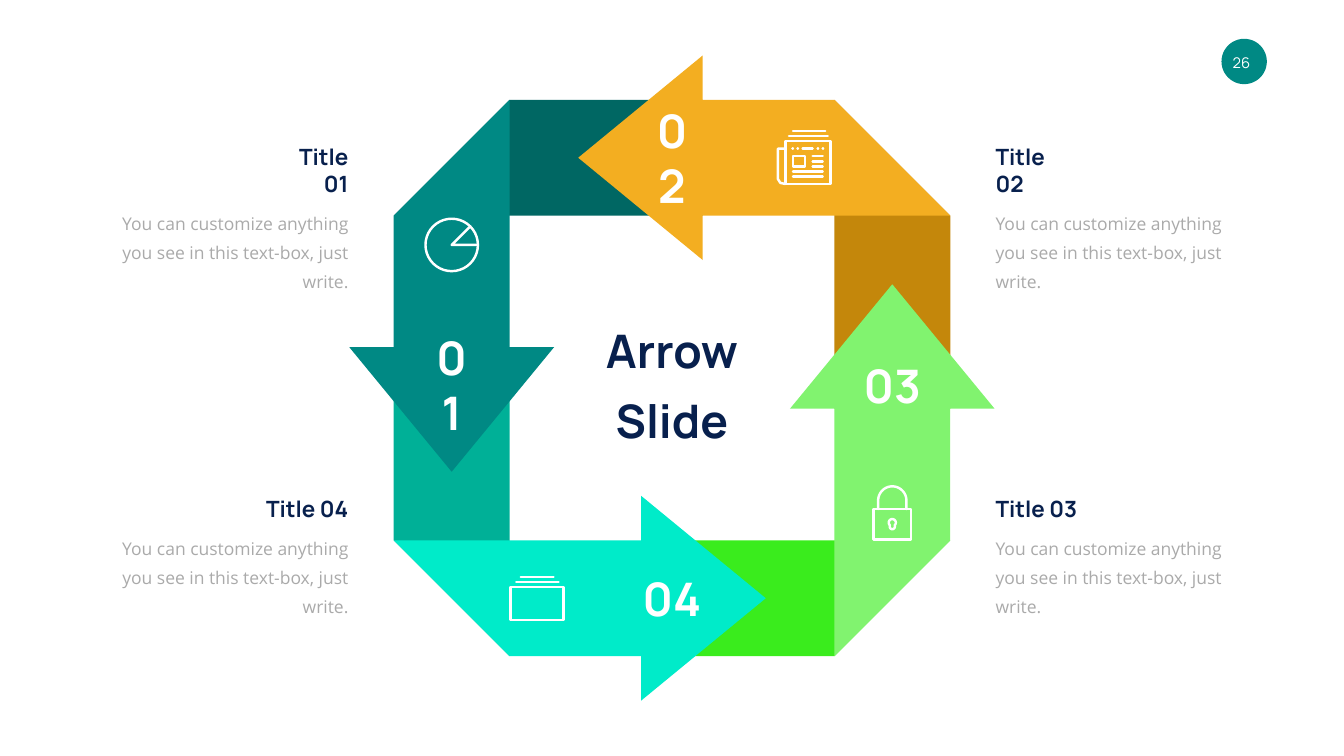
from math import cos, radians, sin

from pptx import Presentation
from pptx.dml.color import RGBColor
from pptx.enum.shapes import MSO_SHAPE as Shape
from pptx.enum.text import MSO_ANCHOR as Anchor
from pptx.enum.text import MSO_AUTO_SIZE as AutoSize
from pptx.enum.text import PP_ALIGN as Align
from pptx.oxml.ns import qn
from pptx.util import Inches, Pt

WHITE = RGBColor(0xFF, 0xFF, 0xFF)
NAVY = RGBColor(0x08, 0x20, 0x4D)
GREY = RGBColor(0xAA, 0xAA, 0xAA)
TEAL = RGBColor(0x00, 0x89, 0x84)
DARK_TEAL = RGBColor(0x00, 0x67, 0x63)
JADE = RGBColor(0x00, 0xB0, 0x97)
AQUA = RGBColor(0x00, 0xEB, 0xC9)
GREEN = RGBColor(0x3A, 0xEC, 0x1D)
LIGHT_GREEN = RGBColor(0x81, 0xF3, 0x6F)
AMBER = RGBColor(0xF3, 0xAE, 0x21)
BROWN = RGBColor(0xC4, 0x87, 0x0B)

HEADING_FONT, BODY_FONT = "Manrope", "Open Sans"
BODY = "You can customize anything you see in this text-box, just write."
CENTER_X, CENTER_Y = 13.33, 7.5

# Left side of the ring, relative to its centre
BAND = [(-3.22, 5.52), (-3.22, -0.61), (-5.52, -0.61), (-5.52, 3.22)]
ARROW = [(-3.22, -5.52), (-5.52, -3.22), (-5.52, -0.61), (-6.4, -0.61),
         (-4.37, 1.86), (-2.34, -0.61), (-3.22, -0.61)]

# Quarter turns from the left side: left, bottom, right, top
BAND_COLORS = [JADE, GREEN, BROWN, DARK_TEAL]
ARROW_COLORS = [TEAL, AQUA, LIGHT_GREEN, AMBER]

# Number, centre and width of each arrow label
NUMBERS = [("02", 13.33, 3.13, 1.3), ("04", 13.33, 11.87, 1.45),
           ("03", 17.7, 7.63, 1.45), ("01", 8.96, 7.63, 1.13)]

# Title, outer edge of the text, top, title width and alignment
CAPTIONS = [("Title 02", 19.65, 3.32, 1.75, Align.LEFT),
            ("Title 03", 19.65, 9.77, 1.9, Align.LEFT),
            ("Title 01", 7.01, 3.32, 1.75, Align.RIGHT),
            ("Title 04", 7.01, 9.77, 1.9, Align.RIGHT)]


def write(shape, text, *, size, color, font=HEADING_FONT, bold=False,
          align=Align.CENTER, anchor=Anchor.MIDDLE, spacing=None):
    frame = shape.text_frame
    frame.text = text
    frame.word_wrap = True
    frame.auto_size = AutoSize.SHAPE_TO_FIT_TEXT
    frame.vertical_anchor = anchor
    for paragraph in frame.paragraphs:
        paragraph.alignment = align
        paragraph.line_spacing = spacing
        style = paragraph.runs[0].font
        style.name, style.size, style.bold = font, Pt(size), bold
        style.color.rgb = color


def add_text(slide, text, left, top, width, height, **style):
    box = slide.shapes.add_textbox(Inches(left), Inches(top),
                                   Inches(width), Inches(height))
    write(box, text, **style)


def build_outline(slide, contours, close):
    first, *others = [[(Inches(x), Inches(y)) for x, y in contour]
                      for contour in contours]
    builder = slide.shapes.build_freeform(*first[0])
    builder.add_line_segments(first[1:], close=close)
    for contour in others:
        builder.move_to(*contour[0])
        builder.add_line_segments(contour[1:], close=close)
    shape = builder.convert_to_shape()
    shape.shadow.inherit = False
    return shape


def add_ring_part(slide, points, quarter_turns, color):
    for _ in range(quarter_turns):
        points = [(y, -x) for x, y in points]
    points = [(CENTER_X + x, CENTER_Y + y) for x, y in points]
    shape = build_outline(slide, [points], close=True)
    shape.fill.solid()
    shape.fill.fore_color.rgb = color
    shape.line.fill.background()


def add_icon(slide, strokes):
    shape = build_outline(slide, strokes, close=False)
    shape.fill.background()
    shape.line.color.rgb = WHITE
    shape.line.width = Pt(3.5)
    shape.element.spPr.find(qn("a:ln")).set("cap", "rnd")


def arc(x, y, radius, start, end):
    angles = [radians(start + (end - start) * i / 40) for i in range(41)]
    return [(x + radius * cos(a), y + radius * sin(a)) for a in angles]


def rectangle(left, top, right, bottom):
    return [(left, top), (right, top), (right, bottom), (left, bottom),
            (left, top)]


def rule(left, right, y):
    return [(left, y), (right, y)]


def add_icons(slide):
    # Pie chart
    add_icon(slide, [arc(8.96, 4.86, 0.52, 0, 360),
                     [(9.31, 4.51), (8.96, 4.86), (9.48, 4.86)]])
    # Padlock
    keyhole = arc(17.7, 10.37, 0.07, 135, 405) + arc(17.7, 10.45, 0.05, 0, 180)
    shackle = [(17.42, 10.1), *arc(17.7, 9.93, 0.28, 180, 360), (17.98, 10.1)]
    add_icon(slide, [rectangle(17.33, 10.1, 18.07, 10.7), shackle,
                     keyhole + keyhole[:1]])
    # Newspaper
    side = [(15.58, 2.95), (15.43, 2.95), (15.43, 3.55), (15.48, 3.63),
            (15.58, 3.65)]
    add_icon(slide, [rectangle(15.58, 2.8, 16.47, 3.65), side,
                     rectangle(15.73, 3.1, 15.97, 3.3),
                     rule(15.65, 16.42, 2.7), rule(15.73, 16.37, 2.6),
                     rule(15.92, 16.12, 2.95),
                     *[rule(x, x + 0.01, 2.95)
                       for x in (15.72, 15.82, 16.22, 16.32)],
                     *[rule(16.12, 16.32, y) for y in (3.1, 3.2, 3.3)],
                     *[rule(15.73, 16.32, y) for y in (3.4, 3.5)]])
    # Folder
    add_icon(slide, [rectangle(10.13, 11.65, 11.18, 12.3),
                     rule(10.24, 11.08, 11.55), rule(10.33, 10.98, 11.45)])


def add_caption(slide, title, edge, top, width, align):
    def left_of(box_width):
        return edge if align == Align.LEFT else edge - box_width

    add_text(slide, title, left_of(width), top, width, 0.64, size=32,
             color=NAVY, bold=True, align=align, anchor=Anchor.BOTTOM)
    add_text(slide, BODY, left_of(5.35), top + 0.71, 5.35, 1.2, size=25,
             color=GREY, font=BODY_FONT, align=align, anchor=Anchor.TOP,
             spacing=Pt(41))


def add_page_number(slide):
    badge = slide.shapes.add_shape(Shape.OVAL, Inches(24.23), Inches(0.77),
                                   Inches(0.9), Inches(0.9))
    badge.shadow.inherit = False
    badge.fill.solid()
    badge.fill.fore_color.rgb = TEAL
    badge.line.fill.background()
    add_text(slide, "26", 24.23, 0.93, 0.79, 0.61, size=21, color=WHITE)


def main():
    presentation = Presentation()
    presentation.slide_width = Inches(26.66)
    presentation.slide_height = Inches(15)
    slide = presentation.slides.add_slide(presentation.slide_layouts[5])

    # Title in the middle of the ring
    title = slide.shapes.title
    title.left, title.top = Inches(11.84), Inches(6.08)
    title.width, title.height = Inches(2.98), Inches(2.83)
    write(title, "Arrow\nSlide", size=66, color=NAVY, bold=True,
          spacing=Pt(100))

    add_page_number(slide)

    # Ring: bands below, arrows above
    for points, colors in ((BAND, BAND_COLORS), (ARROW, ARROW_COLORS)):
        for quarter_turns, color in enumerate(colors):
            add_ring_part(slide, points, quarter_turns, color)
    add_icons(slide)

    # Captions and arrow numbers
    for caption in CAPTIONS:
        add_caption(slide, *caption)
    for number, x, y, width in NUMBERS:
        add_text(slide, number, x - width / 2, y - 0.6, width, 1.2, size=66,
                 color=WHITE, bold=True)

    presentation.save("out.pptx")


if __name__ == "__main__":
    main()
